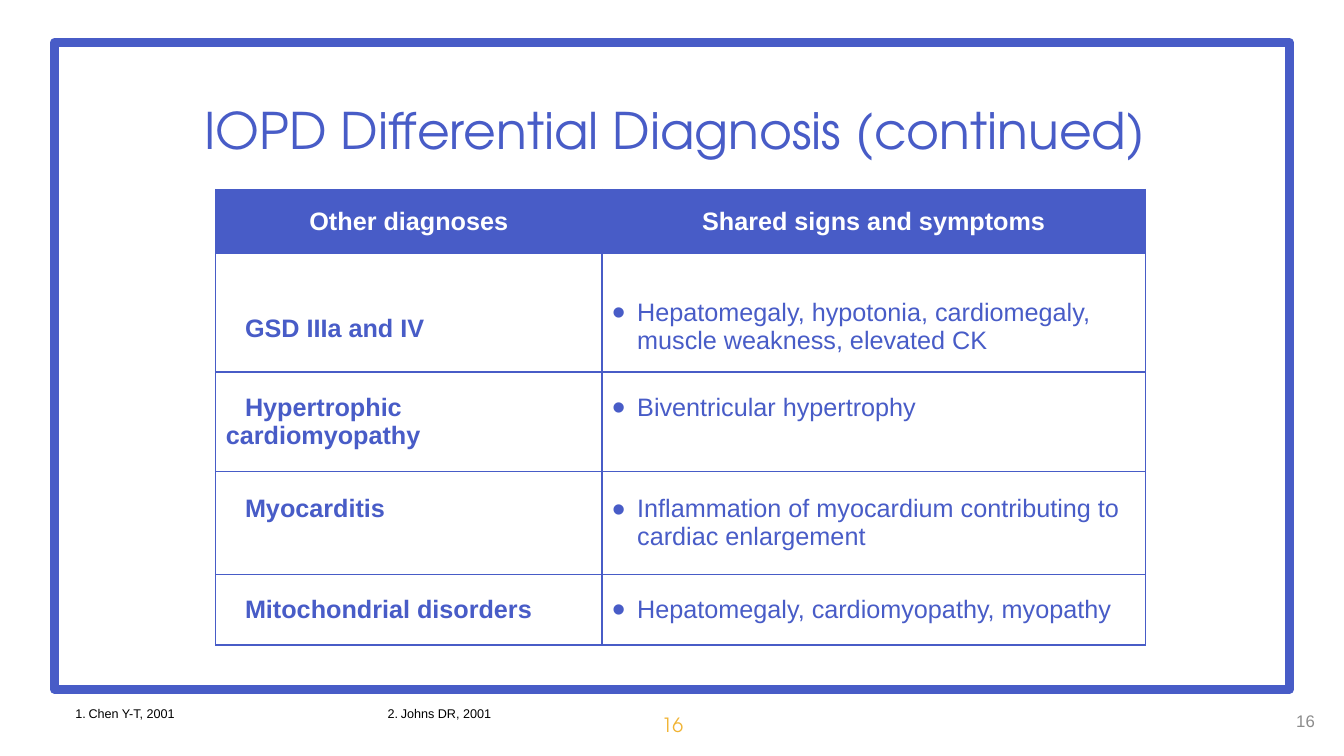
from dataclasses import dataclass

from lxml import etree
from pptx import Presentation
from pptx.dml.color import RGBColor
from pptx.enum.shapes import MSO_SHAPE
from pptx.enum.text import MSO_ANCHOR, PP_ALIGN
from pptx.oxml.ns import qn
from pptx.util import Inches, Pt

RECT = MSO_SHAPE.RECTANGLE
TOP, MID = MSO_ANCHOR.TOP, MSO_ANCHOR.MIDDLE
LEFT, MIDDLE, RIGHT = PP_ALIGN.LEFT, PP_ALIGN.CENTER, PP_ALIGN.RIGHT


@dataclass(frozen=True)
class Theme:
    """Colours, fonts and type sizes."""
    blue: str = "485CC7"
    gold: str = "F1B434"
    gray: str = "8C8C8C"
    white: str = "FFFFFF"
    black: str = "000000"
    head: str = "TeX Gyre Adventor"
    body: str = "Arial"
    title: int = 36
    cell: int = 18
    page: int = 14
    num: int = 12
    note: int = 9


THEME = Theme()
HEADS = ("Other diagnoses", "Shared signs and symptoms")
ROWS = (
    ("GSD IIIa and IV",
     "Hepatomegaly, hypotonia, cardiomegaly, muscle weakness, elevated CK"),
    ("Hypertrophic cardiomyopathy", "Biventricular hypertrophy"),
    ("Myocarditis",
     "Inflammation of myocardium contributing to cardiac enlargement"),
    ("Mitochondrial disorders", "Hepatomegaly, cardiomyopathy, myopathy"),
)
WIDTHS = (3.83, 5.39)
HEIGHTS = (0.63, 1.18, 0.99, 1.02, 0.7)
PADS = {(1, 0): (0.37, 0.05), (1, 1): (0.33, 0.05),
        (2, 1): (0.05, 0.33), (3, 0): (0.05, 0.33)}
NOTES = ("Chen Y-T, 2001", "Johns DR, 2001")


def indent(para, left, first):
    """Set the left margin and first-line indent of a paragraph."""
    props = para._p.get_or_add_pPr()
    props.set("marL", str(Inches(left)))
    props.set("indent", str(Inches(first)))
    return props


def write(frame, text, size, color, font=THEME.body, bold=False, align=LEFT):
    """Add one styled run to the first paragraph of a frame."""
    para = frame.paragraphs[0]
    para.alignment = align
    run = para.add_run()
    run.text = text
    run.font.size = Pt(size)
    run.font.name = font
    run.font.bold = bold
    run.font.color.rgb = RGBColor.from_string(color)
    return para


def label(slide, box, text, size, color, font=THEME.body, align=LEFT,
          anchor=MID):
    """Place a text box and return its paragraph."""
    frame = slide.shapes.add_textbox(*map(Inches, box)).text_frame
    frame.word_wrap = True
    frame.vertical_anchor = anchor
    return write(frame, text, size, color, font, align=align)


def border(cell):
    """Draw thin blue lines on all four sides of a cell."""
    props = cell._tc.get_or_add_tcPr()
    for side in ("lnL", "lnR", "lnT", "lnB"):
        line = etree.SubElement(props, qn(f"a:{side}"), w=str(Pt(1)))
        fill = etree.SubElement(line, qn("a:solidFill"))
        etree.SubElement(fill, qn("a:srgbClr"), val=THEME.blue)


def frame(slide, box):
    """Draw the heavy frame around the content."""
    shape = slide.shapes.add_shape(RECT, *map(Inches, box))
    shape.shadow.inherit = False
    shape.fill.background()
    shape.line.color.rgb = RGBColor.from_string(THEME.blue)
    shape.line.width = Pt(6)
    etree.SubElement(shape.line._ln, qn("a:round"))


def title(slide, box, text):
    """Move and fill the title placeholder."""
    shape = slide.shapes.title
    shape.left, shape.top, shape.width, shape.height = map(Inches, box)
    shape.text_frame.vertical_anchor = MID
    write(shape.text_frame, text, THEME.title, THEME.blue, THEME.head,
          align=MIDDLE)


def fill_cell(cell, text, row, col):
    """Style one cell by its row and column and write its text."""
    border(cell)
    cell.vertical_anchor = MID
    top, low = PADS.get((row, col), (0.05, 0.05))
    cell.margin_top, cell.margin_bottom = Inches(top), Inches(low)
    if row == 0:
        cell.fill.solid()
        cell.fill.fore_color.rgb = RGBColor.from_string(THEME.blue)
        write(cell.text_frame, text, THEME.cell, THEME.white, bold=True,
              align=MIDDLE)
        return
    cell.fill.background()
    para = write(cell.text_frame, text, THEME.cell, THEME.blue,
                 bold=col == 0)
    if col == 0:
        indent(para, 0, 0.19)
    else:
        props = indent(para, 0.25, -0.25)
        etree.SubElement(props, qn("a:buSzPct"), val="150000")
        etree.SubElement(props, qn("a:buFont"), typeface=THEME.body)
        etree.SubElement(props, qn("a:buChar"), char="•")


def grid(slide, box):
    """Build the table of diagnoses."""
    data = (HEADS, *ROWS)
    table = slide.shapes.add_table(len(data), len(HEADS),
                                   *map(Inches, box)).table
    table.horz_banding = False
    for col, width in zip(table.columns, WIDTHS):
        col.width = Inches(width)
    for row, height in zip(table.rows, HEIGHTS):
        row.height = Inches(height)
    for row, texts in enumerate(data):
        for col, text in enumerate(texts):
            fill_cell(table.cell(row, col), text, row, col)


def notes(slide, box):
    """Set the numbered references in thirds of the box."""
    left, top, width, height = box
    step = width / 3
    for i, text in enumerate(NOTES):
        para = label(slide, (left + i * step, top, step, height), text,
                     THEME.note, THEME.black, anchor=TOP)
        props = indent(para, 0.13, -0.13)
        etree.SubElement(props, qn("a:buFont"), typeface=THEME.body)
        etree.SubElement(props, qn("a:buAutoNum"), type="arabicPeriod",
                         startAt=str(i + 1))


def main():
    """Build and save the slide."""
    deck = Presentation()
    deck.slide_width, deck.slide_height = Inches(13.33), Inches(7.5)
    slide = deck.slides.add_slide(deck.slide_layouts[5])
    frame(slide, (0.54, 0.42, 12.25, 6.42))
    label(slide, (6.38, 7.04, 0.58, 0.3), "16", THEME.page, THEME.gold,
          THEME.head, MIDDLE)
    title(slide, (0.57, 0.67, 12.24, 1.23),
          "IOPD Differential Diagnosis (continued)")
    label(slide, (10.14, 6.95, 3, 0.4), "16", THEME.num, THEME.gray,
          align=RIGHT)
    grid(slide, (2.14, 1.88, sum(WIDTHS), sum(HEIGHTS)))
    notes(slide, (0.65, 6.95, 9.29, 0.25))
    deck.save("out.pptx")


if __name__ == "__main__":
    main()
